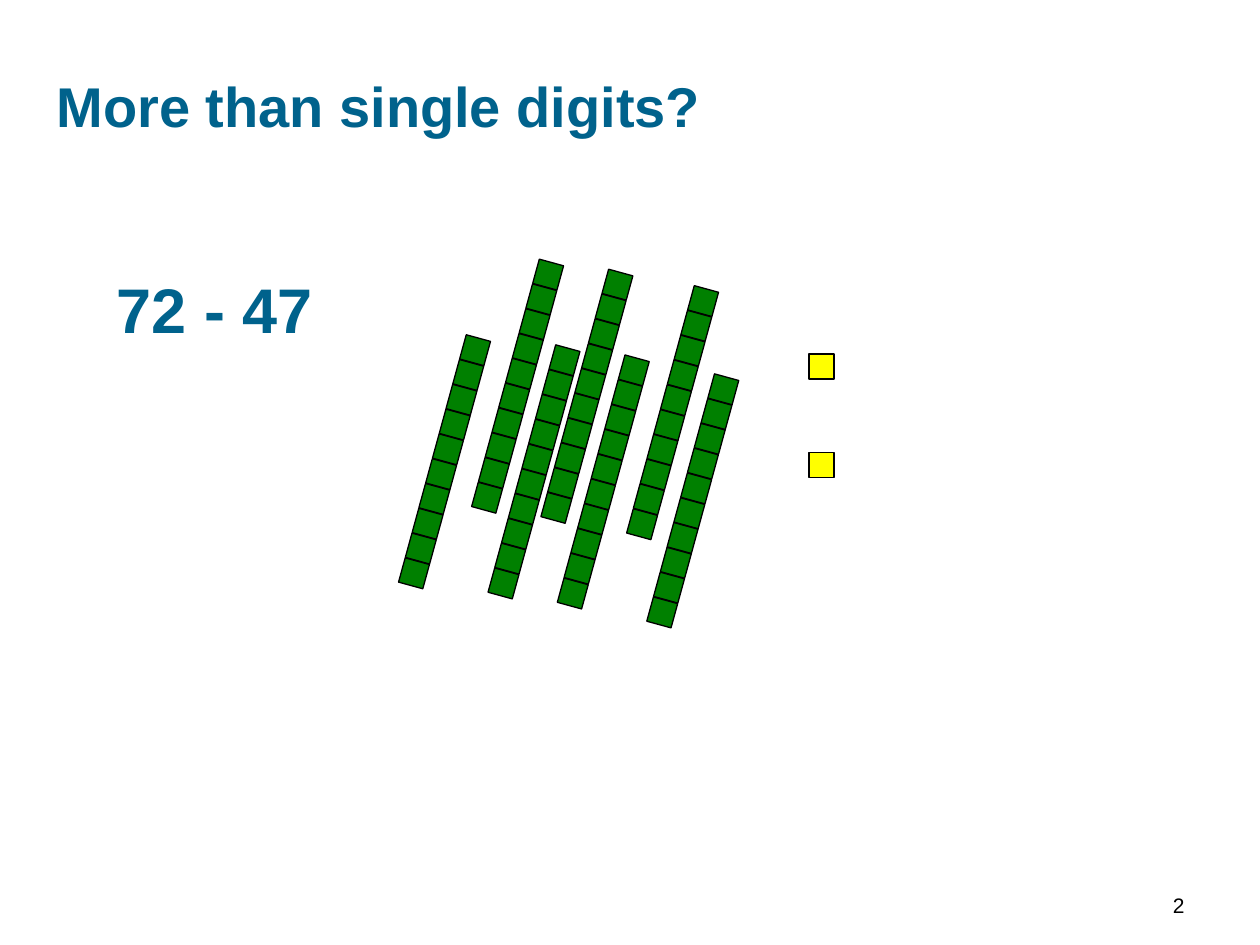
from math import cos, radians, sin

from pptx import Presentation
from pptx.dml.color import RGBColor
from pptx.enum.shapes import MSO_SHAPE
from pptx.enum.text import MSO_ANCHOR, PP_ALIGN
from pptx.util import Inches, Pt

RECTANGLE = MSO_SHAPE.RECTANGLE
TOP, MIDDLE, BOTTOM = MSO_ANCHOR.TOP, MSO_ANCHOR.MIDDLE, MSO_ANCHOR.BOTTOM
LEFT, RIGHT = PP_ALIGN.LEFT, PP_ALIGN.RIGHT

COLORS = {"heading": "00628C", "ten": "008000", "one": "FFFF00", "ink": "000000"}
CELL = Inches(0.2)
COLUMNS, ROWS = 50, 37.5
TILT = 15.3
STEP = 1.02
TENS = [(24, 10.8), (21.9, 13.8), (27.4, 11.45), (18.35, 13.4),
        (21.25, 10.4), (28.2, 14.95), (24.65, 14.2)]
ONES = [(32.1, 14.05), (32.1, 17.95)]


def cells(*counts):
    """Turn counts of grid cells into slide lengths."""
    return [round(count * CELL) for count in counts]


def add_square(shapes, column, row, color, rotation=0):
    """Draw one outlined counting square of a single cell."""
    square = shapes.add_shape(RECTANGLE, *cells(column, row, 1, 1))
    square.shadow.inherit = False
    square.rotation = rotation
    square.fill.solid()
    square.fill.fore_color.rgb = RGBColor.from_string(COLORS[color])
    square.line.color.rgb = RGBColor.from_string(COLORS["ink"])
    square.line.width = Pt(0.75)


def add_ten_rod(page, column, row):
    """Group ten squares into a tilted rod whose first square is at the given cell."""
    rod = page.shapes.add_group_shape()
    across, down = -STEP * sin(radians(TILT)), STEP * cos(radians(TILT))
    for index in range(10):
        add_square(rod.shapes, column + index * across, row + index * down,
                   "ten", 90 + TILT)


def add_text(page, bounds, text, size, color, bold=False, anchor=TOP, align=LEFT):
    """Write one line of text in a box measured in cells."""
    box = page.shapes.add_textbox(*cells(*bounds))
    frame = box.text_frame
    frame.word_wrap = True
    frame.vertical_anchor = anchor
    para = frame.paragraphs[0]
    para.text = text
    para.alignment = align
    para.font.name = "Arial"
    para.font.size = Pt(size)
    para.font.bold = bold
    para.font.color.rgb = RGBColor.from_string(COLORS[color])


def build_slide(deck):
    """Lay out the heading, the subtraction and its counting blocks."""
    page = deck.slides.add_slide(deck.slide_layouts[6])
    add_text(page, (1.75, 1.05, 34.25, 6.25), "More than single digits?", 32,
             "heading", bold=True, anchor=MIDDLE)
    add_text(page, (4.15, 10.5, 11, 3.5), "72 - 47", 36, "heading", bold=True)
    for column, row in TENS:
        add_ten_rod(page, column, row)
    for column, row in ONES:
        add_square(page.shapes, column, row, "one")
    add_text(page, (35.85, 34.15, 11.65, 2.5), "2", 12, "ink",
             anchor=BOTTOM, align=RIGHT)


def main():
    """Create the deck and save it."""
    deck = Presentation()
    deck.slide_width, deck.slide_height = cells(COLUMNS, ROWS)
    build_slide(deck)
    deck.save("out.pptx")


if __name__ == "__main__":
    main()
